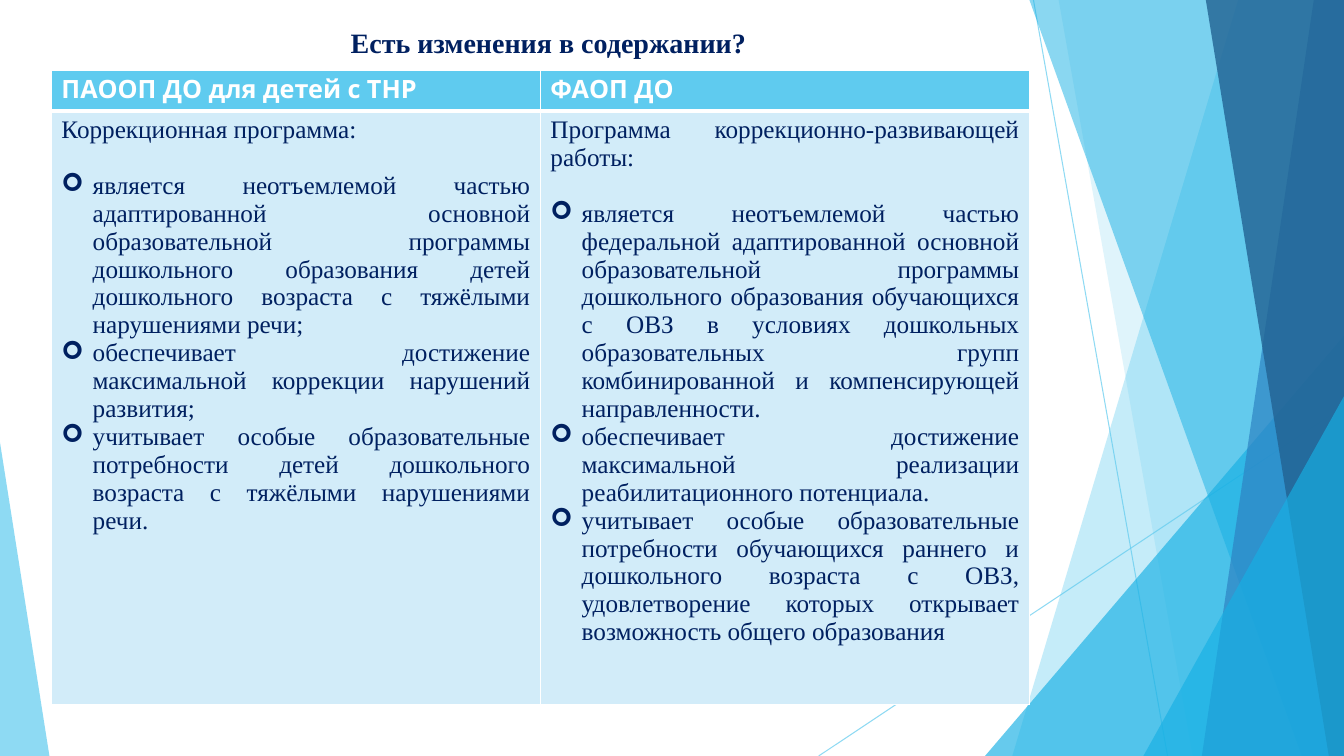
from lxml.etree import SubElement
from pptx import Presentation
from pptx.dml.color import RGBColor
from pptx.enum.shapes import MSO_CONNECTOR as Connector, MSO_SHAPE as Shape
from pptx.enum.text import MSO_ANCHOR as Anchor, MSO_AUTO_SIZE as AutoSize, PP_ALIGN as Align
from pptx.oxml import parse_xml
from pptx.oxml.ns import nsdecls, qn
from pptx.util import Inches, Pt

COLORS = {
    "sky": "5FCBEF",
    "azure": "17B0E4",
    "blue": "2E83C3",
    "deep": "226292",
    "pale": "D2ECF9",
    "navy": "002060",
    "white": "FFFFFF",
}
BODY_FONT = "Times New Roman"
HEADER_FONT = "Karla"
TITLE = "Есть изменения в содержании? "
COLUMNS = [
    (
        "ПАООП ДО для детей с ТНР",
        "Коррекционная программа: ",
        [
            "является неотъемлемой частью адаптированной основной образовательной программы "
            "дошкольного образования детей дошкольного возраста с тяжёлыми нарушениями речи; ",
            "обеспечивает достижение максимальной коррекции нарушений развития; ",
            "учитывает особые образовательные потребности детей дошкольного возраста "
            "с тяжёлыми нарушениями речи. ",
        ],
    ),
    (
        "ФАОП ДО",
        "Программа коррекционно-развивающей работы: ",
        [
            "является неотъемлемой частью федеральной адаптированной основной образовательной "
            "программы дошкольного образования обучающихся с ОВЗ в условиях дошкольных "
            "образовательных групп комбинированной и компенсирующей направленности. ",
            "обеспечивает достижение максимальной реализации реабилитационного потенциала. ",
            "учитывает особые образовательные потребности обучающихся раннего и дошкольного "
            "возраста с ОВЗ, удовлетворение которых открывает возможность общего образования ",
        ],
    ),
]


def color(name):
    return RGBColor.from_string(COLORS[name])


def set_alpha(element, percent):
    for color_element in element.iter(qn("a:srgbClr")):
        SubElement(color_element, qn("a:alpha")).set("val", str(percent * 1000))


def paint(shape, name, alpha):
    shape.shadow.inherit = False
    shape.fill.solid()
    shape.fill.fore_color.rgb = color(name)
    shape.line.fill.background()
    set_alpha(shape.element.spPr, alpha)


def add_run(paragraph, text, font, size, name, bold=False):
    run = paragraph.add_run()
    run.text = text
    run.font.name = font
    run.font.size = Pt(size)
    run.font.bold = bold
    run.font.color.rgb = color(name)


def add_ray(slide, start, end):
    ray = slide.shapes.add_connector(Connector.STRAIGHT, *map(Inches, start + end))
    ray.line.color.rgb = color("sky")
    ray.line.width = Pt(0.75)
    properties = ray.element.spPr
    set_alpha(properties, 70)
    SubElement(properties, qn("a:effectLst"))


def add_band(slide, box, top_x, bottom_x, name, alpha):
    left, top, width, height = box
    right, bottom = left + width, top + height
    corners = [(right, top), (right, bottom), (left + bottom_x, bottom)]
    builder = slide.shapes.build_freeform(Inches(left + top_x), Inches(top))
    builder.add_line_segments([(Inches(x), Inches(y)) for x, y in corners])
    paint(builder.convert_to_shape(), name, alpha)


def add_corner(slide, box, apex, name, alpha):
    triangle = slide.shapes.add_shape(Shape.ISOSCELES_TRIANGLE, *map(Inches, box))
    triangle.adjustments[0] = apex
    paint(triangle, name, alpha)


def add_decoration(slide, box):
    left, top, width, height = box
    right, bottom = left + width, top + height
    add_ray(slide, (left + 10.25, top), (left + 11.58, bottom))
    add_ray(slide, (right, top + 4.03), (left + 8.12, bottom))

    def right_corner(corner_width, corner_height):
        corner = (right - corner_width, bottom - corner_height, corner_width, corner_height)
        add_corner(slide, corner, 1, "azure", 66)

    add_band(slide, box, 12.28, 10.04, "sky", 36)
    add_band(slide, box, 10.5, 11.83, "sky", 20)
    right_corner(3.56, 4.17)
    add_band(slide, box, 10.21, 12.91, "azure", 50)
    add_band(slide, box, 13.03, 11.92, "blue", 70)
    add_band(slide, box, 11.96, 13.18, "deep", 80)
    right_corner(1.99, 3.57)
    add_corner(slide, (left, bottom - 3.11, 0.49, 3.11), 0, "sky", 70)


def add_title(slide, box):
    title = slide.shapes.title
    title.left, title.top, title.width, title.height = map(Inches, box)
    frame = title.text_frame
    frame.word_wrap = True
    frame.auto_size = AutoSize.SHAPE_TO_FIT_TEXT
    frame.vertical_anchor = Anchor.TOP
    paragraph = frame.paragraphs[0]
    paragraph.alignment = Align.CENTER
    add_run(paragraph, TITLE, BODY_FONT, 20, "navy", True)


def style_cell(cell, name, top_width, bottom_width):
    cell.fill.solid()
    cell.fill.fore_color.rgb = color(name)
    properties = cell._tc.get_or_add_tcPr()
    widths = {"lnL": 1, "lnR": 1, "lnT": top_width, "lnB": bottom_width}
    for index, (side, width) in enumerate(widths.items()):
        border = parse_xml(
            f'<a:{side} {nsdecls("a")} w="{Pt(width)}"><a:solidFill>'
            f'<a:srgbClr val="{COLORS["white"]}"/></a:solidFill></a:{side}>'
        )
        properties.insert(index, border)


def add_bullet(paragraph):
    properties = paragraph._p.get_or_add_pPr()
    properties.set("marL", str(Inches(0.31)))
    properties.set("indent", str(-Inches(0.31)))
    SubElement(properties, qn("a:buFont")).set("typeface", "Wingdings")
    SubElement(properties, qn("a:buChar")).set("char", "➢")


def fill_body(cell, intro, points):
    frame = cell.text_frame
    opening = frame.paragraphs[0]
    opening.alignment = Align.JUSTIFY
    opening.space_after = Pt(20)
    add_run(opening, intro, BODY_FONT, 18, "navy")
    for point in points:
        paragraph = frame.add_paragraph()
        paragraph.alignment = Align.JUSTIFY
        add_bullet(paragraph)
        add_run(paragraph, point, BODY_FONT, 18, "navy")


def add_comparison(slide, box):
    header_height = 0.39
    frame = slide.shapes.add_table(2, len(COLUMNS), *map(Inches, box))
    table = frame.table
    table.first_row = False
    table.horz_banding = False
    table.rows[0].height = Inches(header_height)
    table.rows[1].height = Inches(box[3] - header_height)
    for index, (heading, intro, points) in enumerate(COLUMNS):
        table.columns[index].width = Inches(box[2] / len(COLUMNS))
        header, body = table.cell(0, index), table.cell(1, index)
        style_cell(header, "sky", 1, 3)
        style_cell(body, "pale", 3, 1)
        add_run(header.text_frame.paragraphs[0], heading, HEADER_FONT, 18, "white", True)
        fill_body(body, intro, points)


def main():
    presentation = Presentation()
    presentation.slide_width = Inches(13.33)
    presentation.slide_height = Inches(7.5)
    slide = presentation.slides.add_slide(presentation.slide_layouts[5])
    add_decoration(slide, (0, 0, 13.33, 7.5))
    add_title(slide, (2.14, 0.2, 6.67, 0.44))
    add_comparison(slide, (0.51, 0.7, 9.7, 6.28))
    presentation.save("out.pptx")


if __name__ == "__main__":
    main()
